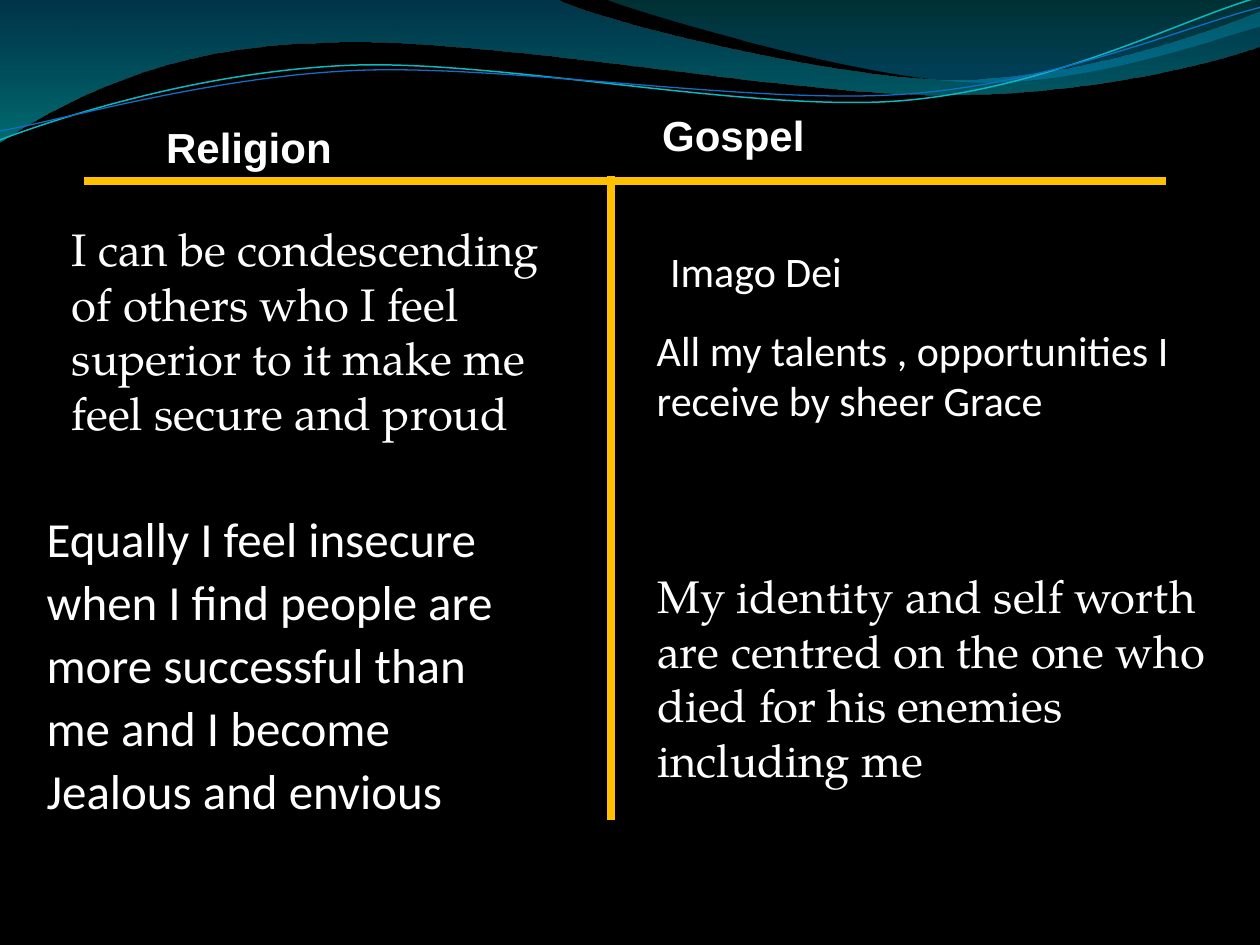
from lxml.etree import SubElement
from pptx import Presentation
from pptx.dml.color import RGBColor
from pptx.enum.shapes import MSO_CONNECTOR as Link
from pptx.enum.text import MSO_AUTO_SIZE as Fit
from pptx.oxml.ns import qn
from pptx.util import Cm, Pt

BLACK = RGBColor(0x00, 0x00, 0x00)
WHITE = RGBColor(0xFF, 0xFF, 0xFF)
GOLD = RGBColor(0xFF, 0xC0, 0x00)
BLUE = RGBColor(0x00, 0x74, 0xA1)
AQUA = RGBColor(0x00, 0xC6, 0xCF)
TEAL = RGBColor(0x00, 0xA1, 0xA9)
SKY = RGBColor(0x00, 0x8B, 0xBF)
CYAN = RGBColor(0x0A, 0xB8, 0xBF)
COBALT = RGBColor(0x0F, 0x6F, 0xC6)
SERIF = "TeX Gyre Pagella"

prs = Presentation()
prs.slide_width, prs.slide_height = Cm(25.4), Cm(19.05)
slide = prs.slides.add_slide(prs.slide_layouts[6])
slide.background.fill.solid()
slide.background.fill.fore_color.rgb = BLACK
shapes = slide.shapes


def add_curve(home, start, parts, closed):
    """Trace parts in cm: a pair is a straight line, six numbers a Bezier curve."""
    pen = home.build_freeform(Cm(start[0]), Cm(start[1]))
    for part in parts:
        dots = [(Cm(x), Cm(y)) for x, y in zip(part[::2], part[1::2])]
        pen.add_line_segments(dots, close=False)
    if closed:
        pen.add_line_segments([], close=True)
    shape = pen.convert_to_shape()
    shape.shadow.inherit = False
    # Join the three points of each curve into one Bezier segment
    steps = iter(list(shape._element.iter(qn("a:lnTo"))))
    for part in parts:
        first = next(steps)
        if len(part) == 6:
            first.tag = qn("a:cubicBezTo")
            for _ in range(2):
                step = next(steps)
                first.append(step[0])
                step.getparent().remove(step)
    return shape


def add_text(text, x, y, w, h, font="Calibri", size=24, bold=False, space=None, after=0):
    box = shapes.add_textbox(Cm(x), Cm(y), Cm(w), Cm(h))
    frame = box.text_frame
    frame.word_wrap = True
    frame.auto_size = Fit.SHAPE_TO_FIT_TEXT
    para = frame.paragraphs[0]
    para.line_spacing = space
    para.space_after = Pt(after)
    run = para.add_run()
    run.text = text
    run.font.name, run.font.size, run.font.bold = font, Pt(size), bold
    run.font.color.rgb = WHITE


# Waves: start, parts, then colour, place and opacity of each gradient stop
waves = [
    ((0, -0.03),
     [(11.18, -0.03),
      (12.09, 0.43, 16.87, 1.6, 19.25, 1.6),
      (21.67, 1.6, 24.33, 0.66, 25.4, 0.23),
      (25.43, 0.91),
      (24.97, 1.12, 22.1, 1.93, 18.95, 1.91),
      (15.8, 1.91, 9.7, 0.71, 6.53, 0.86),
      (3.28, 0.89, 1.17, 2.11, -0.03, 2.87),
      (0, -0.03)],
     [(BLUE, 0, 45), (AQUA, 1, 55)]),
    ((12.17, -0.03),
     [(12.93, 0.28, 17.32, 1.57, 19.53, 1.65),
      (21.74, 1.75, 24.41, 0.81, 25.4, 0.53),
      (25.4, 0),
      (12.17, -0.03)],
     [(TEAL, 0, 30), (SKY, 0.8, 45)]),
]
for start, parts, stops in waves:
    wave = add_curve(shapes, start, parts, True)
    wave.line.fill.background()
    wave.fill.gradient()
    wave.fill.gradient_angle = 270
    for stop, (color, place, _) in zip(wave.fill.gradient_stops, stops):
        stop.color.rgb = color
        stop.position = place
    tints = wave.fill._xPr.iter(qn("a:srgbClr"))
    for tint, (_, _, alpha) in zip(tints, stops):
        SubElement(tint, qn("a:alpha"), val=str(alpha * 1000))

# Thin lines along the waves, drawn level and then tilted
strands = [
    ((-0.05, 2.22),
     [(1.19, 1.82, 4.02, 1.04, 7.05, 1.05),
      (10.05, 1.07, 15.02, 2.37, 18.08, 2.29),
      (21.13, 2.2, 23.87, 0.91, 25.41, 0.55)], CYAN, 0.85),
    ((-0.04, 2.04),
     [(1.16, 1.9, 4.18, 1.15, 7.2, 1.16),
      (10.25, 1.18, 15.13, 2.23, 18.18, 2.16),
      (21.21, 2.1, 23.93, 1.06, 25.45, 0.75)], COBALT, 0.75),
]
group = shapes.add_group_shape()
for start, parts, color, width in strands:
    strand = add_curve(group.shapes, start, parts, False)
    strand.rotation = 357.3
    strand.fill.background()
    strand.line.color.rgb = color
    strand.line.width = Pt(width)

# Rules between the two columns
for ends in [(23.5, 3.64, 1.7, 3.64), (12.32, 3.55, 12.32, 16.54)]:
    rule = shapes.add_connector(Link.STRAIGHT, *map(Cm, ends))
    rule.line.color.rgb = GOLD
    rule.line.width = Pt(4.5)
    SubElement(rule._element.spPr, qn("a:effectLst"))

add_text("Religion", 3.1, 2.32, 6.4, 1.3, font="Arial", bold=True)
add_text("Gospel", 13.1, 2.08, 6.4, 1.3, font="Arial", bold=True)
add_text("I can be condescending of others who I feel superior to it make me "
         "feel secure and proud", 1.2, 4.33, 10.36, 4.7, font=SERIF, size=26)
add_text("My identity and self worth are centred on the one who died for his "
         "enemies including me", 13, 11.33, 11.71, 4.7, font=SERIF, size=26)
add_text("Equally I feel insecure when I find people are more successful than "
         "me and I become Jealous and envious", 0.69, 10.04, 10.21, 6.6,
         size=28, space=1.07, after=8)
add_text("All my talents , opportunities I receive by sheer Grace",
         12.99, 6.41, 11.23, 2.31)
add_text("Imago Dei", 13.26, 4.83, 11.23, 1.27)

prs.save("out.pptx")
